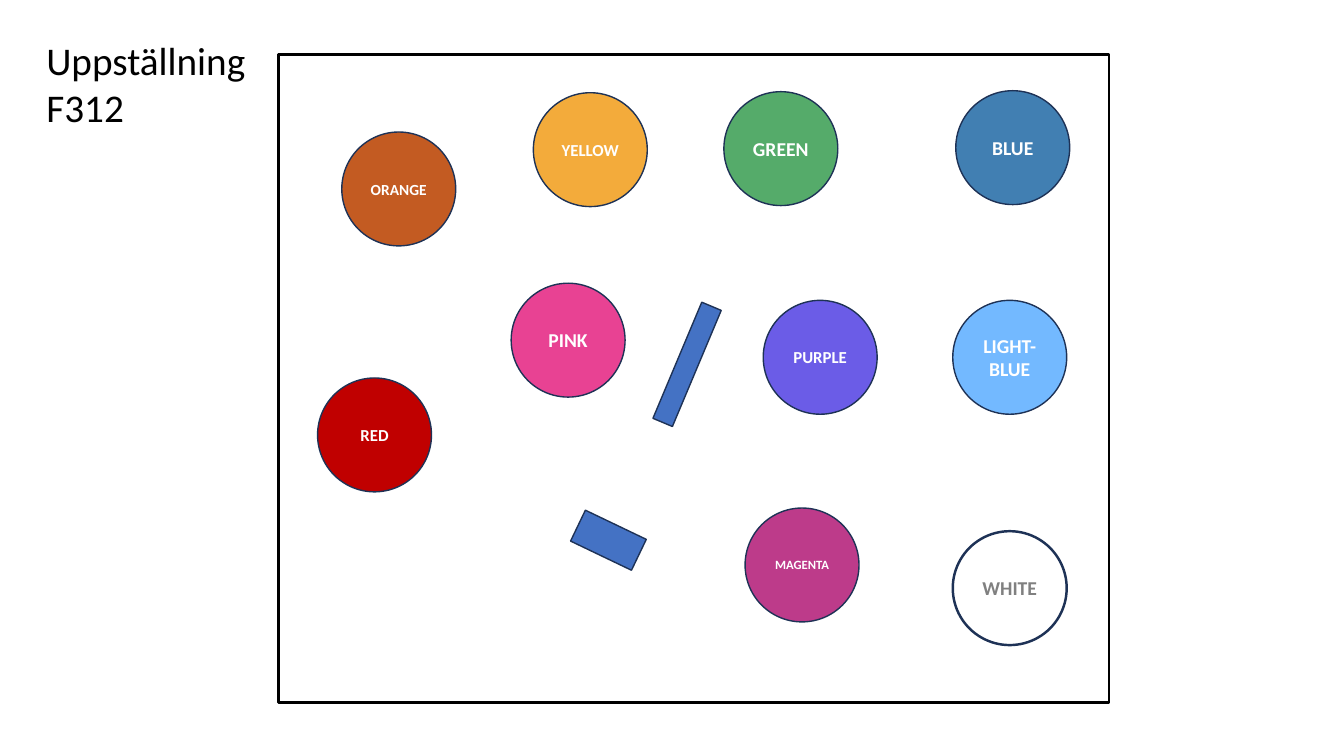
"""Build the room layout slide for F312 with its coloured, named tables."""
from pptx import Presentation
from pptx.dml.color import RGBColor
from pptx.enum import shapes, text
from pptx.util import Pt

PX = 9144
FONT = "Calibri"
DIAMETER = 113
COLOURS = {
    "paper": "FFFFFF", "ink": "000000", "outline": "1E3256", "bench": "4472C4",
    "grey": "808080", "ORANGE": "C35B22", "RED": "C00000", "YELLOW": "F3AB3B",
    "GREEN": "55AB6A", "PINK": "E84293", "PURPLE": "6B5CE7",
    "MAGENTA": "BD3B8A", "WHITE": "FFFFFF", "LIGHT- BLUE": "73B9FF",
    "BLUE": "417FB2",
}


def add_figure(kind, left, top, width, height, fill, line, weight):
    figure = page.shapes.add_shape(
        kind, left * PX, top * PX, width * PX, height * PX)
    figure.shadow.inherit = False
    figure.fill.solid()
    figure.fill.fore_color.rgb = RGBColor.from_string(COLOURS[fill])
    figure.line.color.rgb = RGBColor.from_string(COLOURS[line])
    figure.line.width = Pt(weight)
    return figure


def add_span(para, words, size, colour, bold):
    span = para.add_run()
    span.text = words
    span.font.name = FONT
    span.font.size = Pt(size)
    span.font.bold = bold
    span.font.color.rgb = RGBColor.from_string(COLOURS[colour])


deck = Presentation()
deck.slide_width, deck.slide_height = 1333 * PX, 750 * PX
page = deck.slides.add_slide(deck.slide_layouts.get_by_name("Title Only"))

title = page.shapes.title
title.left, title.top, title.width, title.height = (
    36 * PX, 31 * PX, 223 * PX, 104 * PX)
title_frame = title.text_frame
title_frame.word_wrap = True
title_frame.auto_size = text.MSO_AUTO_SIZE.NONE
title_frame.vertical_anchor = text.MSO_ANCHOR.TOP
for number, words in enumerate(["Uppställning", "F312"]):
    para = title_frame.add_paragraph() if number else title_frame.paragraphs[0]
    para.alignment = text.PP_ALIGN.LEFT
    para.space_before = Pt(0)
    add_span(para, words, 28, "ink", False)

RECTANGLE = shapes.MSO_SHAPE.RECTANGLE
add_figure(RECTANGLE, 276, 54, 824, 643, "paper", "ink", 2)

tables = [
    ("ORANGE", 339, 131, 11),
    ("RED", 315, 375, 12),
    ("YELLOW", 529, 92, 12),
    ("GREEN", 718, 91, 14),
    ("PINK", 507, 281, 14),
    ("PURPLE", 757, 298, 12),
    ("MAGENTA", 739, 504, 9),
    ("WHITE", 945, 527, 14),
    ("LIGHT- BLUE", 945, 298, 14),
    ("BLUE", 948, 90, 14),
]
for name, left, top, size in tables:
    is_white = name == "WHITE"
    table = add_figure(shapes.MSO_SHAPE.OVAL, left, top, DIAMETER, DIAMETER,
                       name, "outline", 1.75 if is_white else 1)
    table.text_frame.word_wrap = True
    table.text_frame.vertical_anchor = text.MSO_ANCHOR.MIDDLE
    para = table.text_frame.paragraphs[0]
    para.alignment = text.PP_ALIGN.CENTER
    add_span(para, name, size, "grey" if is_white else "paper", True)

benches = [(671, 299, 21, 125, 22.8), (570, 519, 67, 34, 25.6)]
for left, top, width, height, angle in benches:
    bench = add_figure(RECTANGLE, left, top, width, height,
                       "bench", "outline", 1)
    bench.rotation = angle

deck.save("out.pptx")
